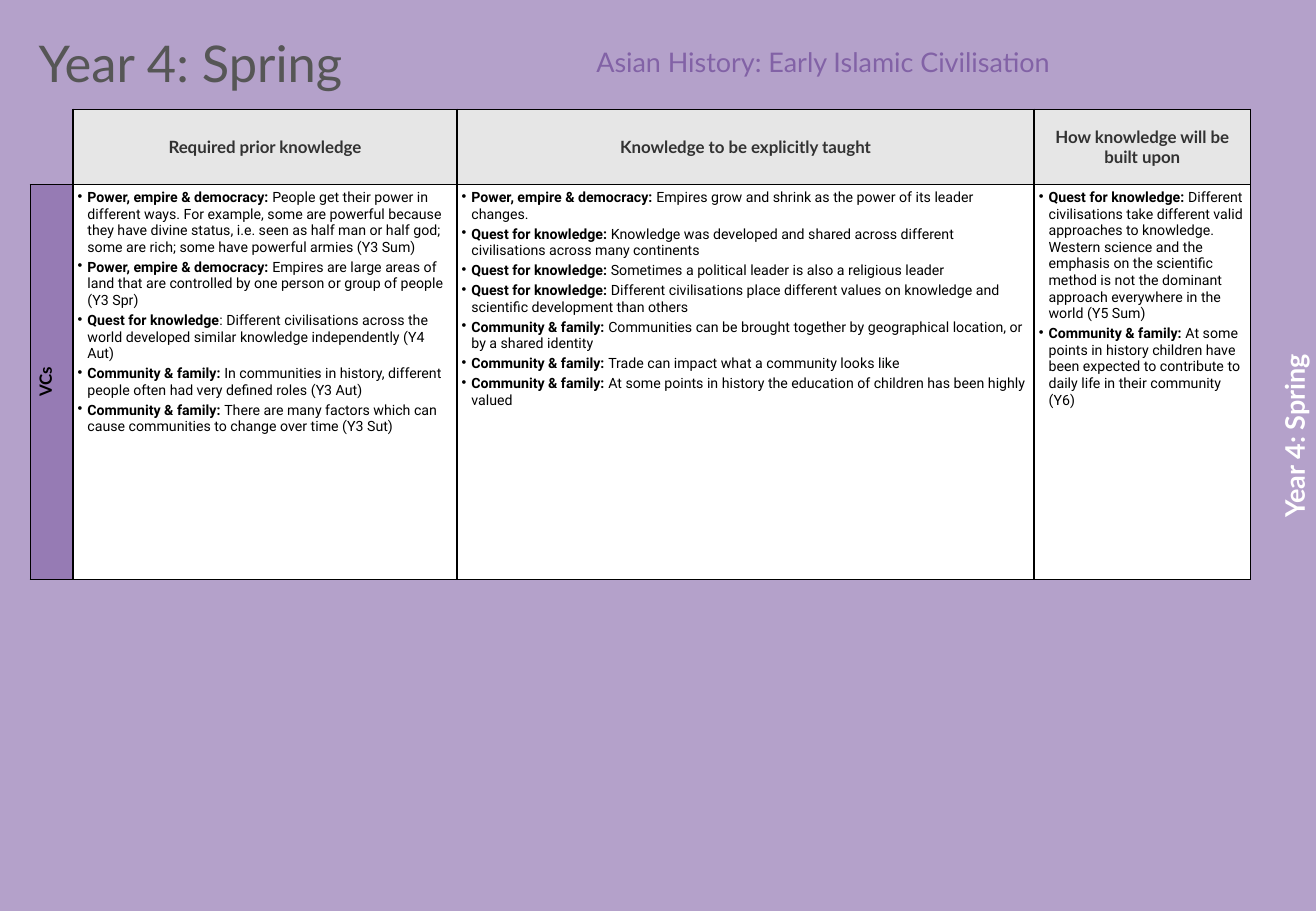
from pptx import Presentation
from pptx.dml.color import RGBColor
from pptx.enum import text
from pptx.oxml import parse_xml
from pptx.oxml.ns import nsdecls, qn
from pptx.util import Inches, Pt

BACKGROUND = RGBColor(0xB4, 0xA1, 0xCA)
PURPLE = RGBColor(0x82, 0x62, 0xA6)
TITLE_GREY = RGBColor(0x56, 0x56, 0x56)
HEADER_GREY = RGBColor(0xE6, 0xE6, 0xE6)
HEADER_TEXT = RGBColor(0x32, 0x32, 0x32)
WHITE = RGBColor(0xFF, 0xFF, 0xFF)
BLACK = RGBColor(0, 0, 0)

TERM = "Year 4: Spring"
TOPIC = "Asian History: Early Islamic Civilisation"
ROW_LABEL = "VCs"
POWER = "Power, empire & democracy: "
QUEST = "Quest for knowledge: "
FAMILY = "Community & family: "

# Each column: heading, then (concept, statement) bullets
COLUMNS = [
    ("Required prior knowledge", [
        (POWER, "People get their power in different ways. For example, some are powerful "
                "because they have divine status, i.e. seen as half man or half god; some are "
                "rich; some have powerful armies (Y3 Sum)"),
        (POWER, "Empires are large areas of land that are controlled by one person or group "
                "of people (Y3 Spr)"),
        ("Quest for knowledge", ": Different civilisations across the world developed similar "
                                "knowledge independently (Y4 Aut)"),
        (FAMILY, "In communities in history, different people often had very defined roles "
                 "(Y3 Aut)"),
        (FAMILY, "There are many factors which can cause communities to change over time "
                 "(Y3 Sut)"),
    ]),
    ("Knowledge to be explicitly taught", [
        (POWER, "Empires grow and shrink as the power of its leader changes."),
        (QUEST, "Knowledge was developed and shared across different civilisations across "
                "many continents"),
        (QUEST, "Sometimes a political leader is also a religious leader"),
        (QUEST, "Different civilisations place different values on knowledge and scientific "
                "development than others"),
        (FAMILY, "Communities can be brought together by geographical location, or by a "
                 "shared identity"),
        (FAMILY, "Trade can impact what a community looks like"),
        (FAMILY, "At some points in history the education of children has been highly valued"),
    ]),
    ("How knowledge will be built upon", [
        (QUEST, "Different civilisations take different valid approaches to knowledge. Western "
                "science and the emphasis on the scientific method is not the dominant "
                "approach everywhere in the world (Y5 Sum)"),
        (FAMILY, "At some points in history children have been expected to contribute to "
                 "daily life in their community (Y6)"),
    ]),
]
COL_WIDTHS = [0.35, 3.16, 4.75, 1.78]
ROW_HEIGHTS = [0.62, 3.25]
NO_STYLE = "{2D5ABB26-0587-4C30-8999-92F81FD0307C}"


def add_text(p, content, size=10, font="Lato", color=BLACK, bold=False, align=None):
    if align is not None:
        p.alignment = align
    r = p.add_run()
    r.text = content
    r.font.size, r.font.name, r.font.bold = Pt(size), font, bold
    r.font.color.rgb = color


def add_box(s, box, content, rotation=0, **fmt):
    sp = s.shapes.add_textbox(*map(Inches, box))
    sp.rotation = rotation
    tf = sp.text_frame
    tf.word_wrap = True
    tf.vertical_anchor = text.MSO_ANCHOR.MIDDLE
    add_text(tf.paragraphs[0], content, **fmt)


def add_bullet(p, concept, statement):
    pPr = p._p.get_or_add_pPr()
    pPr.set("marL", str(Inches(0.08)))
    pPr.set("indent", str(-Inches(0.08)))
    pPr.append(parse_xml(f'<a:buChar {nsdecls("a")} char="•"/>'))
    p.space_after = Pt(2)
    add_text(p, concept, size=8.4, font="Roboto", bold=True)
    add_text(p, statement, size=8.4, font="Roboto")


def format_cell(cell, fill=None, sides="LRTB", anchor=text.MSO_ANCHOR.MIDDLE):
    cell.margin_left = cell.margin_right = Inches(0.04)
    cell.margin_top = cell.margin_bottom = Inches(0.04)
    cell.vertical_anchor = anchor
    if fill is None:
        cell.fill.background()
    else:
        cell.fill.solid()
        cell.fill.fore_color.rgb = fill
    tcPr = cell._tc.get_or_add_tcPr()
    for i, side in enumerate(sides):
        tcPr.insert(i, parse_xml(
            f'<a:ln{side} {nsdecls("a")} w="{Pt(1)}"><a:solidFill>'
            f'<a:srgbClr val="{BLACK}"/></a:solidFill></a:ln{side}>'))
    return tcPr


def add_knowledge_table(s):
    frame = s.shapes.add_table(len(ROW_HEIGHTS), len(COL_WIDTHS), Inches(0.25), Inches(0.9),
                               Inches(sum(COL_WIDTHS)), Inches(sum(ROW_HEIGHTS)))
    table = frame.table
    table.first_row = table.horz_banding = False
    table._tbl.tblPr.find(qn("a:tableStyleId")).text = NO_STYLE
    for col, width in zip(table.columns, COL_WIDTHS):
        col.width = Inches(width)
    for row, height in zip(table.rows, ROW_HEIGHTS):
        row.height = Inches(height)

    center = text.PP_ALIGN.CENTER
    format_cell(table.cell(0, 0), sides="RB")
    label = table.cell(1, 0)
    tcPr = format_cell(label, PURPLE)
    tcPr.set("vert", "vert270")
    tcPr.find(qn("a:solidFill"))[0].append(
        parse_xml(f'<a:alpha {nsdecls("a")} val="60000"/>'))
    add_text(label.text_frame.paragraphs[0], ROW_LABEL, bold=True, align=center)

    for c, (heading, bullets) in enumerate(COLUMNS, start=1):
        head, body = table.cell(0, c), table.cell(1, c)
        format_cell(head, HEADER_GREY)
        add_text(head.text_frame.paragraphs[0], heading, color=HEADER_TEXT, bold=True,
                 align=center)
        format_cell(body, WHITE, anchor=text.MSO_ANCHOR.TOP)
        tf = body.text_frame
        for i, (concept, statement) in enumerate(bullets):
            p = tf.add_paragraph() if i else tf.paragraphs[0]
            add_bullet(p, concept, statement)


def main():
    prs = Presentation()
    prs.slide_width, prs.slide_height = Inches(10.83), Inches(7.5)
    s = prs.slides.add_slide(prs.slide_layouts[6])
    s.background.fill.solid()
    s.background.fill.fore_color.rgb = BACKGROUND
    add_box(s, (0.22, 0.26, 8.42, 0.5), TERM, size=30, color=TITLE_GREY)
    add_box(s, (9.46, 3.42, 2.38, 0.34), TERM, rotation=270, size=16, color=WHITE,
            bold=True, align=text.PP_ALIGN.CENTER)
    add_box(s, (3.73, 0.26, 5.01, 0.5), TOPIC, size=16, color=PURPLE,
            align=text.PP_ALIGN.RIGHT)
    add_knowledge_table(s)
    prs.save("out.pptx")


if __name__ == "__main__":
    main()
